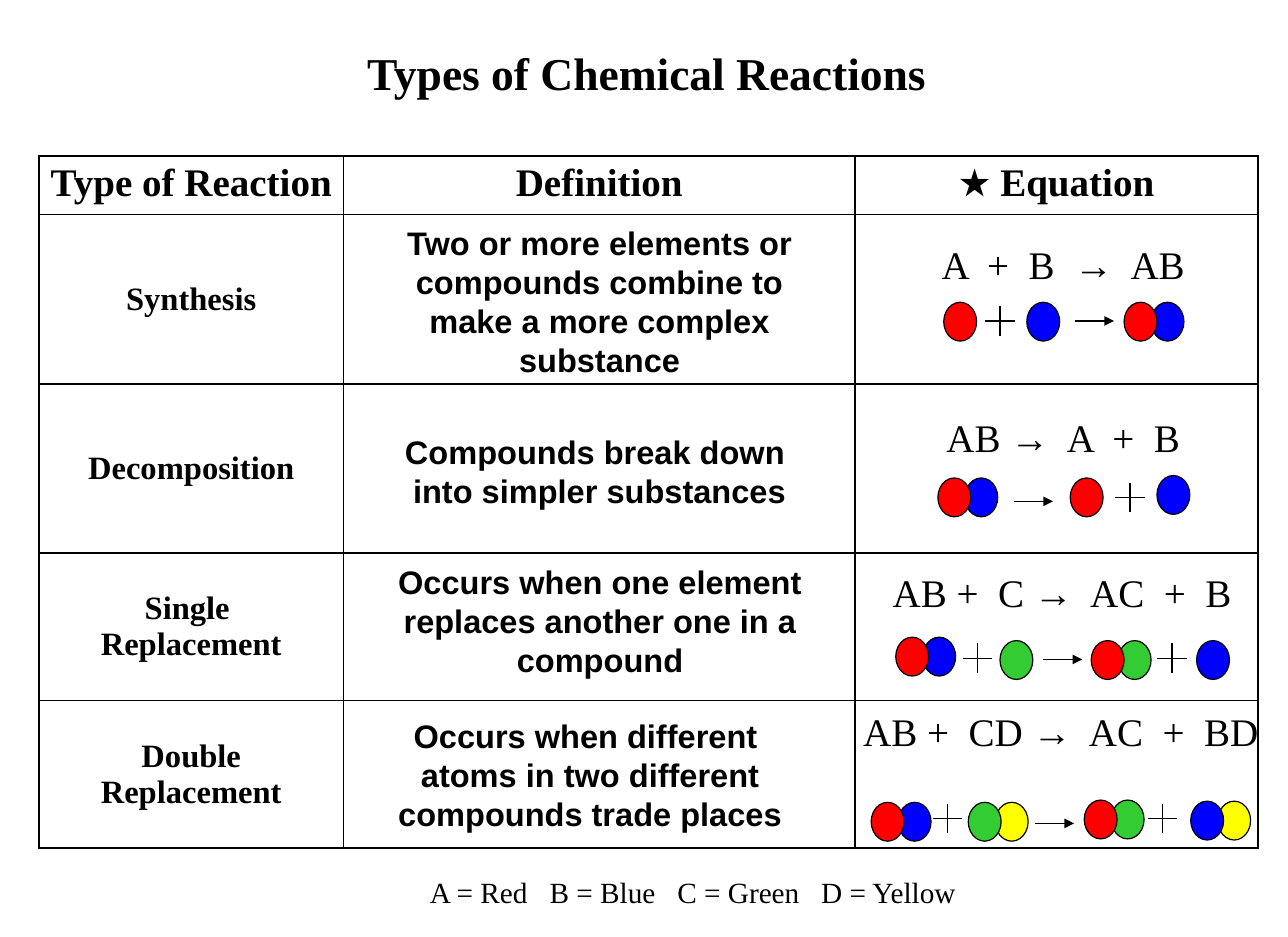
from dataclasses import dataclass

from lxml.etree import SubElement
from pptx import Presentation
from pptx.dml.color import RGBColor
from pptx.enum.shapes import MSO_CONNECTOR as Connector, MSO_SHAPE as Shape
from pptx.enum.text import MSO_ANCHOR as Anchor, MSO_AUTO_SIZE as AutoSize, PP_ALIGN as Align
from pptx.oxml.ns import qn
from pptx.util import Pt

BLACK = RGBColor(0x00, 0x00, 0x00)
WHITE = RGBColor(0xFF, 0xFF, 0xFF)
ATOM_COLORS = {
    "A": RGBColor(0xFF, 0x00, 0x00),
    "B": RGBColor(0x00, 0x00, 0xFF),
    "C": RGBColor(0x33, 0xCC, 0x33),
    "D": RGBColor(0xFF, 0xFF, 0x00),
}
SERIF, SANS = "Times New Roman", "Arial"

COLUMN_WIDTHS = (187.2, 314.6, 247.8)
ROW_HEIGHTS = (36.2, 104, 104, 90.7, 90.7)
HEADERS = ("Type of Reaction", "Definition", "★ ")


@dataclass
class Reaction:
    """One table row; boxes are (left, top, width, height), diagram parts (symbol, x, y)."""
    name: str
    definition: str
    definition_box: tuple
    equation: str
    equation_box: tuple
    diagram: tuple


REACTIONS = (
    Reaction(
        "Synthesis",
        "Two or more elements or compounds combine to make a more complex substance",
        (221.8, 133.2, 293.8, 104.4),
        "A  +  B  →  AB", (545.8, 144, 216, 36.7),
        (("A", 580.3, 185.8), ("+", 614.9, 197.3), ("B", 631.4, 185.8),
         ("→", 661, 197.3), ("AB", 691.2, 185.8))),
    Reaction(
        "Decomposition",
        "Compounds break down \ninto simpler substances",
        (221.8, 262.1, 293.8, 55.4),
        "AB →  A  +  B", (545.8, 250.6, 216, 36.7),
        (("AB", 576.7, 293.8), ("→", 623.5, 308.2), ("A", 658.1, 293.8),
         ("+", 694.8, 306), ("B", 711.4, 292.3))),
    Reaction(
        "Single \vReplacement",
        "Occurs when one element replaces another one in a compound",
        (216, 342, 306, 79.9),
        "AB +  C →  AC  +  B", (524.2, 345.6, 257.8, 36.7),
        (("AB", 550.8, 391.7), ("+", 601.2, 404.6), ("C", 614.9, 393.8),
         ("→", 641.5, 405.4), ("AC", 671, 393.8), ("+", 720.7, 404.6),
         ("B", 735.8, 393.8))),
    Reaction(
        "Double Replacement",
        "Occurs when different \vatoms in two different compounds trade places",
        (216, 436.3, 293.8, 79.9),
        "AB +  CD →  AC  +  BD", (523.4, 431.3, 257.8, 36.7),
        (("AB", 535.7, 493.2), ("+", 582.5, 503.3), ("CD", 595.4, 493.2),
         ("→", 636.5, 506.2), ("AC", 666.7, 491.8), ("+", 715, 503.3),
         ("BD", 732.2, 492.5))),
)


class ReactionSlide:
    atom_width, atom_height, atom_step = 20.2, 23.9, 16.6
    plus_radius, arrow_length = 9, 24
    outline = 0.75

    def __init__(self, presentation):
        self.slide = presentation.slides.add_slide(presentation.slide_layouts[5])
        self.shapes = self.slide.shapes

    def format_text(self, text_frame, size, font=SERIF, bold=False, leading=None):
        for paragraph in text_frame.paragraphs:
            paragraph.alignment = Align.CENTER
            if leading:
                paragraph.line_spacing = Pt(leading)
            for run in paragraph.runs:
                run.font.name = font
                run.font.size = Pt(size)
                run.font.bold = bold
                run.font.color.rgb = BLACK

    def fill_frame(self, text_frame, text, size, **style):
        text_frame.text = text
        text_frame.word_wrap = True
        text_frame.auto_size = AutoSize.NONE
        text_frame.vertical_anchor = Anchor.TOP
        self.format_text(text_frame, size, leading=1.2 * size, **style)

    def title(self, text, left, top, width, height):
        title = self.shapes.title
        title.left, title.top, title.width, title.height = map(Pt, (left, top, width, height))
        self.fill_frame(title.text_frame, text, 28, bold=True)

    def text_box(self, text, box, size, **style):
        shape = self.shapes.add_textbox(*map(Pt, box))
        self.fill_frame(shape.text_frame, text, size, **style)
        return shape

    def border(self, cell):
        properties = cell._tc.get_or_add_tcPr()
        for position, side in enumerate(("a:lnL", "a:lnR", "a:lnT", "a:lnB")):
            line = SubElement(properties, qn(side), w=str(Pt(1)))
            fill = SubElement(line, qn("a:solidFill"))
            SubElement(fill, qn("a:srgbClr"), val=str(BLACK))
            properties.insert(position, line)

    def table(self, left, top):
        frame = self.shapes.add_table(
            len(ROW_HEIGHTS), len(COLUMN_WIDTHS), Pt(left), Pt(top),
            Pt(sum(COLUMN_WIDTHS)), Pt(sum(ROW_HEIGHTS)))
        table = frame.table
        for column, width in zip(table.columns, COLUMN_WIDTHS):
            column.width = Pt(width)
        for row, height in zip(table.rows, ROW_HEIGHTS):
            row.height = Pt(height)
        for cell in table.iter_cells():
            cell.fill.background()
            cell.margin_left = cell.margin_right = Pt(6)
            self.border(cell)

        for column, header in enumerate(HEADERS):
            cell = table.cell(0, column)
            cell.text = header
            self.format_text(cell.text_frame, 24, bold=True)
        star = cell.text_frame.paragraphs[0]
        star.add_run().text = "Equation"
        self.format_text(cell.text_frame, 24, bold=True)
        star.runs[0].font.bold = False

        for row, reaction in enumerate(REACTIONS, start=1):
            cell = table.cell(row, 0)
            cell.text = reaction.name
            cell.vertical_anchor = Anchor.MIDDLE
            self.format_text(cell.text_frame, 20, bold=True)

    def line(self, x1, y1, x2, y2, arrowhead=False):
        connector = self.shapes.add_connector(Connector.STRAIGHT, *map(Pt, (x1, y1, x2, y2)))
        connector.line.color.rgb = BLACK
        connector.line.width = Pt(self.outline)
        if arrowhead:
            SubElement(connector.line._get_or_add_ln(), qn("a:tailEnd"), type="triangle")
        SubElement(connector._element.spPr, qn("a:effectLst"))

    def plus(self, x, y):
        radius = self.plus_radius
        self.line(x, y - radius, x, y + radius)
        self.line(x - radius, y, x + radius, y)

    def molecule(self, atoms, left, top):
        """Draw overlapping atoms, the leftmost one in front."""
        for index, atom in reversed(list(enumerate(atoms))):
            shape = self.shapes.add_shape(
                Shape.OVAL, Pt(left + index * self.atom_step), Pt(top),
                Pt(self.atom_width), Pt(self.atom_height))
            shape.shadow.inherit = False
            shape.fill.solid()
            shape.fill.fore_color.rgb = ATOM_COLORS[atom]
            shape.line.color.rgb = BLACK
            shape.line.width = Pt(self.outline)

    def diagram(self, parts):
        for symbol, x, y in parts:
            if symbol == "+":
                self.plus(x, y)
            elif symbol == "→":
                self.line(x, y, x + self.arrow_length, y, arrowhead=True)
            else:
                self.molecule(symbol, x, y)


def main():
    presentation = Presentation()
    presentation.slide_width, presentation.slide_height = Pt(792), Pt(576)
    page = ReactionSlide(presentation)
    page.table(24, 95.8)
    page.title("Types of Chemical Reactions", 18, 23.8, 758.9, 41)
    legend = page.text_box("A = Red   B = Blue   C = Green   D = Yellow ",
                           (180, 534.2, 496.8, 28.8), 18)
    legend.fill.solid()
    legend.fill.fore_color.rgb = WHITE
    for reaction in REACTIONS:
        page.diagram(reaction.diagram)
        page.text_box(reaction.equation, reaction.equation_box, 24)
        page.text_box(reaction.definition, reaction.definition_box, 20, font=SANS, bold=True)
    presentation.save("out.pptx")


if __name__ == "__main__":
    main()
